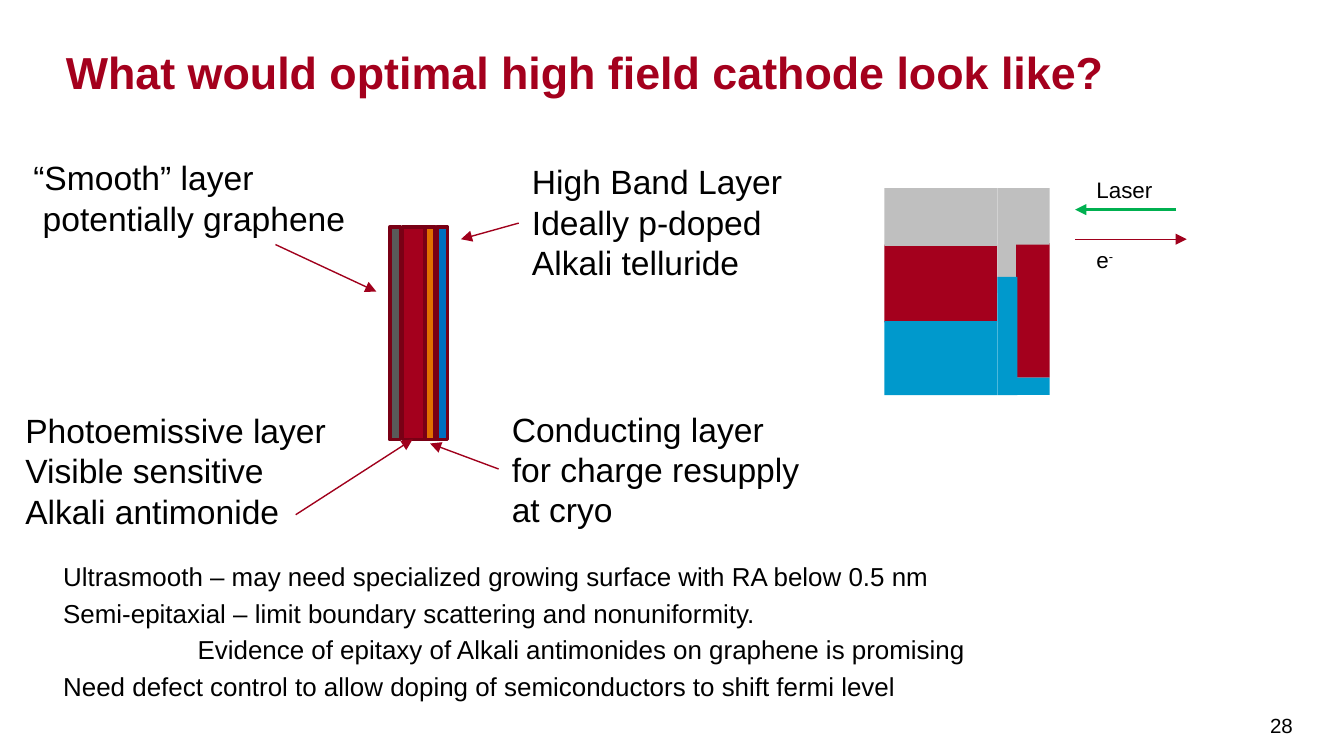
from pptx import Presentation
from pptx.dml.color import RGBColor
from pptx.enum.shapes import MSO_CONNECTOR, MSO_SHAPE
from pptx.enum.text import MSO_ANCHOR, MSO_AUTO_SIZE, PP_ALIGN
from pptx.oxml.ns import qn
from pptx.util import Inches, Pt
from lxml import etree

RECT, LINE = MSO_SHAPE.RECTANGLE, MSO_CONNECTOR.STRAIGHT
LEFT, TOP = PP_ALIGN.LEFT, MSO_ANCHOR.TOP
MIDDLE, BOTTOM = MSO_ANCHOR.MIDDLE, MSO_ANCHOR.BOTTOM
NO_FIT = MSO_AUTO_SIZE.NONE

BLACK = RGBColor(0x00, 0x00, 0x00)
RED = RGBColor(0xA4, 0x00, 0x1D)
DARK = RGBColor(0x79, 0x00, 0x15)
ARROW = RGBColor(0xA0, 0x00, 0x1C)
GREEN = RGBColor(0x00, 0xB0, 0x50)
BLUE = RGBColor(0x00, 0x70, 0xC0)
ORANGE = RGBColor(0xE1, 0x70, 0x00)
SLATE = RGBColor(0x59, 0x59, 0x59)
CYAN = RGBColor(0x00, 0x99, 0xCC)
SILVER = RGBColor(0xBF, 0xBF, 0xBF)

# Content
TITLE = "What would optimal high field cathode look like?"
# Notes: indent in inches, text
NOTES = [
    (0, "Ultrasmooth – may need specialized growing surface with RA below 0.5 nm"),
    (0, "Semi-epitaxial – limit boundary scattering and nonuniformity."),
    (1, "Evidence of epitaxy of Alkali antimonides on graphene is promising"),
    (0, "Need defect control to allow doping of semiconductors to shift fermi level"),
]
# Labels: left, top, width, height, size, lines
LABELS = [
    (0.15, 1.12, 2.7, 0.71, 18, ["“Smooth” layer", " potentially graphene"]),
    (0.09, 3, 3.34, 1.01, 18,
     ["Photoemissive layer", "Visible sensitive", "Alkali antimonide"]),
    (3.71, 2.99, 3.54, 1.01, 18,
     ["Conducting layer", "for charge resupply", "at cryo"]),
    (3.86, 1.15, 2.08, 1.01, 18,
     ["High Band Layer", "Ideally p-doped", "Alkali telluride"]),
    (8.06, 1.26, 1.9, 0.3, 12, ["Laser"]),
]
# Cathode layers: centre x, thickness, colour
STACK_MID, STACK_TALL = 2.48, 1.58
LAYERS = [(3.08, 0.17, RED), (3.29, 0.08, BLUE),
          (3.2, 0.08, ORANGE), (2.94, 0.08, SLATE)]
# Band diagram: left, top, width, height, colour
BANDS = [
    (6.58, 1.82, 0.84, 0.58, RED),
    (6.58, 2.39, 0.84, 0.55, CYAN),
    (6.58, 1.4, 0.84, 0.43, SILVER),
    (7.42, 1.4, 0.15, 0.78, SILVER),
    (7.56, 1.81, 0.25, 1, RED),
    (7.56, 1.4, 0.25, 0.42, SILVER),
    (7.42, 2.06, 0.15, 0.88, CYAN),
    (7.53, 2.81, 0.28, 0.13, CYAN),
]
# Arrows: start, end, colour, weight
ARROWS = [
    ((2.05, 1.82), (2.8, 2.17), ARROW, 0.75),
    ((2.2, 3.83), (3.07, 3.27), ARROW, 0.75),
    ((3.71, 3.49), (3.2, 3.3), ARROW, 0.75),
    ((3.86, 1.66), (3.43, 1.78), ARROW, 0.75),
    ((8, 1.78), (8.83, 1.78), ARROW, 0.75),
    ((8.75, 1.56), (8, 1.56), GREEN, 1.5),
]

# Widescreen slide, 16 to 9
deck = Presentation()
deck.slide_width, deck.slide_height = Inches(10), Inches(10 * 9 / 16)
slide = deck.slides.add_slide(deck.slide_layouts[1])
shapes = slide.shapes


def style(par, size, color=BLACK, bold=False):
    par.alignment = LEFT
    font = par.font
    font.name, font.size, font.bold = "Arial", Pt(size), bold
    font.color.rgb = color


def holder(shape, box, anchor, lines):
    shape.left, shape.top, shape.width, shape.height = map(Inches, box)
    frame = shape.text_frame
    frame.margin_left = frame.margin_right = 0
    frame.margin_top = frame.margin_bottom = 0
    frame.auto_size, frame.vertical_anchor = NO_FIT, anchor
    frame.text = "\n".join(lines)
    return frame.paragraphs


def label(x, y, w, h, size, lines):
    frame = shapes.add_textbox(*map(Inches, (x, y, w, h))).text_frame
    frame.word_wrap = True
    frame.text = "\n".join(lines)
    for par in frame.paragraphs:
        style(par, size)
    return frame


def block(x, y, w, h, fill, edge=None):
    shape = shapes.add_shape(RECT, *map(Inches, (x, y, w, h)))
    shape.shadow.inherit = False
    shape.fill.solid()
    shape.fill.fore_color.rgb = fill
    if edge:
        shape.line.color.rgb = edge
        shape.line.width = Pt(2)
    else:
        shape.line.fill.background()


def arrow(start, end, color, weight):
    line = shapes.add_connector(LINE, *map(Inches, start + end))
    line.line.color.rgb = color
    line.line.width = Pt(weight)
    props = line._element.spPr
    tip = etree.SubElement(props.find(qn("a:ln")), qn("a:tailEnd"))
    tip.set("type", "triangle")
    etree.SubElement(props, qn("a:effectLst"))


# Title and notes
head = holder(shapes.title, (0.49, 0.11, 8.86, 0.62), BOTTOM, [TITLE])
style(head[0], 24, RED, True)
pars = holder(slide.placeholders[1], (0.47, 4.17, 8.87, 1.16), TOP,
              [text for _, text in NOTES])
for par, (indent, _) in zip(pars, NOTES):
    par.space_before, par.space_after = Pt(0), Pt(3)
    par.line_spacing = 1.0
    props = par._p.get_or_add_pPr()
    props.set("marL", str(int(Inches(indent))))
    props.set("indent", "0")
    etree.SubElement(props, qn("a:buNone"))
    style(par, 13.9)

# Cathode stack
for mid, wide, color in LAYERS:
    block(mid - wide / 2, STACK_MID - STACK_TALL / 2, wide, STACK_TALL,
          color, DARK)

# Band diagram
for band in BANDS:
    block(*band)

# Arrows and labels
for item in ARROWS:
    arrow(*item)
for item in LABELS:
    label(*item)
charge = label(8.06, 1.78, 1.9, 0.3, 12, ["e"]).paragraphs[0].add_run()
charge.text = "-"
charge._r.get_or_add_rPr().set("baseline", "30000")

# Page number
page = label(9.37, 5.18, 0.35, 0.44, 11, ["28"])
page.margin_left = page.margin_right = Inches(0.08)
page.vertical_anchor = MIDDLE

deck.save("out.pptx")
